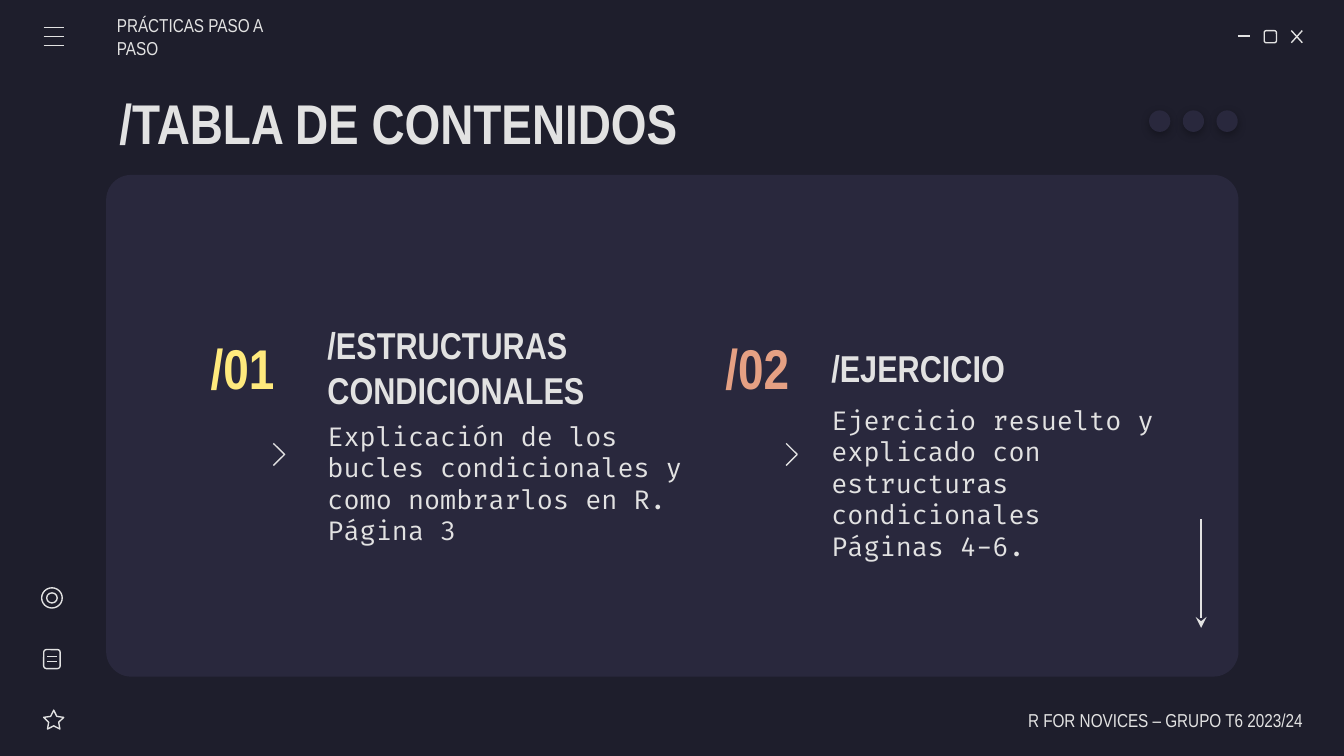
from lxml import etree
from pptx import Presentation
from pptx.dml.color import RGBColor
from pptx.enum.shapes import MSO_CONNECTOR, MSO_SHAPE
from pptx.enum.text import MSO_ANCHOR, PP_ALIGN
from pptx.oxml.ns import qn
from pptx.util import Inches, Pt

LINE = MSO_CONNECTOR.STRAIGHT
ROUND, OVAL, STAR = MSO_SHAPE.ROUNDED_RECTANGLE, MSO_SHAPE.OVAL, MSO_SHAPE.STAR_5_POINT
LEFT, MID, RIGHT = PP_ALIGN.LEFT, PP_ALIGN.CENTER, PP_ALIGN.RIGHT

W = 10
H = W * 9 / 16
SLIDE = (0, 0, W, H)
NIGHT, PANEL, LIGHT, YELLOW, ORANGE = "1E1E2C", "29283D", "E2E2E2", "FFEA7D", "E5A083"
HEAD = {"name": "Arial Narrow", "bold": True}
SMALL = {"name": "Arial Narrow", "size": Pt(10)}
BODY = {"name": "Fira Code", "size": Pt(14)}
PAD = 0.1

prs = Presentation()
prs.slide_width, prs.slide_height = Inches(W), Inches(H)
slide = prs.slides.add_slide(prs.slide_layouts[6])
shapes = slide.shapes


def color(code):
    return RGBColor.from_string(code)


def part(box, x, y, w, h):
    """Box inside another, given in percent of it."""
    left, top, wide, high = box
    return left + wide * x / 100, top + high * y / 100, wide * w / 100, high * h / 100


def inch(box):
    return [Inches(v) for v in box]


def stroke(item):
    item.line.color.rgb = color(LIGHT)
    item.line.width = Pt(0.75)


def shape(kind, box, fill=None):
    """Filled shape, or an outlined one when no fill is given."""
    item = shapes.add_shape(kind, *inch(box))
    item.shadow.inherit = False
    if fill:
        item.fill.solid()
        item.fill.fore_color.rgb = color(fill)
        item.line.fill.background()
    else:
        item.fill.background()
        stroke(item)
    return item


def rule(box, rise=False):
    """Line across a box, from its top left or, rising, its bottom left."""
    x, y, w, h = box
    ends = (x, y + h, x + w, y) if rise else (x, y, x + w, y + h)
    item = shapes.add_connector(LINE, *inch(ends))
    stroke(item)
    etree.SubElement(item._element.spPr, qn("a:effectLst"))
    return item


def text(box, lines, font, tint=LIGHT, align=LEFT, pads=(PAD, PAD)):
    frame = shapes.add_textbox(*inch(box)).text_frame
    form = {"word_wrap": True, "vertical_anchor": MSO_ANCHOR.MIDDLE,
            "margin_left": Inches(pads[0]), "margin_right": Inches(pads[1]),
            "margin_top": Inches(PAD), "margin_bottom": Inches(PAD)}
    for key, val in form.items():
        setattr(frame, key, val)
    for i, line in enumerate(lines):
        para = frame.add_paragraph() if i else frame.paragraphs[0]
        para.alignment = align
        run = para.add_run()
        run.text = line
        run.font.color.rgb = color(tint)
        for key, val in font.items():
            setattr(run.font, key, val)


def menu(box):
    for y in (0, 50, 100):
        rule(part(box, 0, y, 100, 0))


def window(box):
    """Minimise, maximise and close marks."""
    rule(part(box, 0, 45, 19, 0))
    shape(ROUND, part(box, 41, 0, 19, 100))
    for rise in (False, True):
        rule(part(box, 83, 0, 17, 100), rise)


def icons(box):
    ring, page, star = [part(box, 0, 43.3 * i, 100, 14.3) for i in range(3)]
    shape(OVAL, part(ring, 0, 0, 90, 100))
    shape(OVAL, part(ring, 22, 25, 46, 50))
    shape(ROUND, part(page, 9, 3, 72, 94))
    for y in (37, 63):
        rule(part(page, 24, y, 42, 0))
    item = shape(STAR, part(star, 9, 0, 88, 94))
    item.adjustments[0] = 0.25


def dots(box):
    for x in (0, 38, 76):
        item = shape(OVAL, part(box, x, 0, 24, 100), PANEL)
        glow = item._element.spPr.find(qn("a:effectLst"))
        cast = etree.SubElement(glow, qn("a:outerShdw"), blurRad=str(Pt(4.5)),
                                dist=str(Pt(1.5)), dir="5400000", rotWithShape="0")
        tone = etree.SubElement(cast, qn("a:srgbClr"), val="000000")
        etree.SubElement(tone, qn("a:alpha"), val="30000")


def arrow(box):
    item = rule(box)
    etree.SubElement(item.line._get_or_add_ln(), qn("a:tailEnd"), type="stealth")


def chevron(box):
    x, y, w, h = inch(box)
    pen = shapes.build_freeform(x, y)
    pen.add_line_segments([(x + w, y + h // 2), (x, y + h)], close=False)
    item = pen.convert_to_shape()
    item.shadow.inherit = False
    item.fill.background()
    stroke(item)


def entry(box, mark, tint, title, lines):
    """Number and chevron on the left, title and body flush right."""
    x, y, w, h = box
    side = (x, y, 0.91, h)
    main = (x + w - 3.01, y, 3.01, h)
    text(part(side, 0, 0, 100, 32.4), [mark], HEAD | {"size": Pt(30)}, tint, MID)
    chevron(part(box, 17.1, 49, 2.1, 9.5))
    text(part(main, 0, 0, 94, 32.4), [title], HEAD | {"size": Pt(20)})
    text(part(main, 0, 31.8, 100, 68.2), lines, BODY)


def card(box):
    shape(ROUND, box, PANEL).adjustments[0] = 0.05
    entry(part(box, 6.65, 30.8, 47.45, 46.4), "/01", YELLOW, "/ESTRUCTURAS CONDICIONALES",
          ["Explicación de los bucles condicionales y como nombrarlos en R.", "Página 3"])
    entry(part(box, 52.1, 30.8, 46.5, 46.4), "/02", ORANGE, "/EJERCICIO",
          ["Ejercicio resuelto y explicado con estructuras condicionales", "Páginas 4-6."])
    arrow(part(box, 96.7, 68.6, 0, 21.7))


def page(box):
    card(part(box, 7.9, 23.13, 84.25, 66.37))
    window(part(box, 92.1, 4.05, 4.8, 1.6))
    menu(part(box, 3.25, 3.6, 1.5, 2.4))
    icons(part(box, 3.1, 77.76, 1.7, 18.68))
    dots(part(box, 85.5, 14.6, 6.6, 2.85))
    text(part(box, 7.9, 10.5, 84.3, 11.2), ["/TABLA DE CONTENIDOS"], HEAD | {"size": Pt(30)})
    text(part(box, 8.7, 2.14, 14.3, 5.34), ["PRÁCTICAS PASO A PASO"], SMALL, pads=(0, PAD))
    text(part(box, 73.3, 92.53, 23.6, 5.34), ["R FOR NOVICES – GRUPO T6 2023/24"], SMALL,
         align=RIGHT, pads=(PAD, 0))


slide.background.fill.solid()
slide.background.fill.fore_color.rgb = color(NIGHT)
page(SLIDE)
prs.save("out.pptx")
